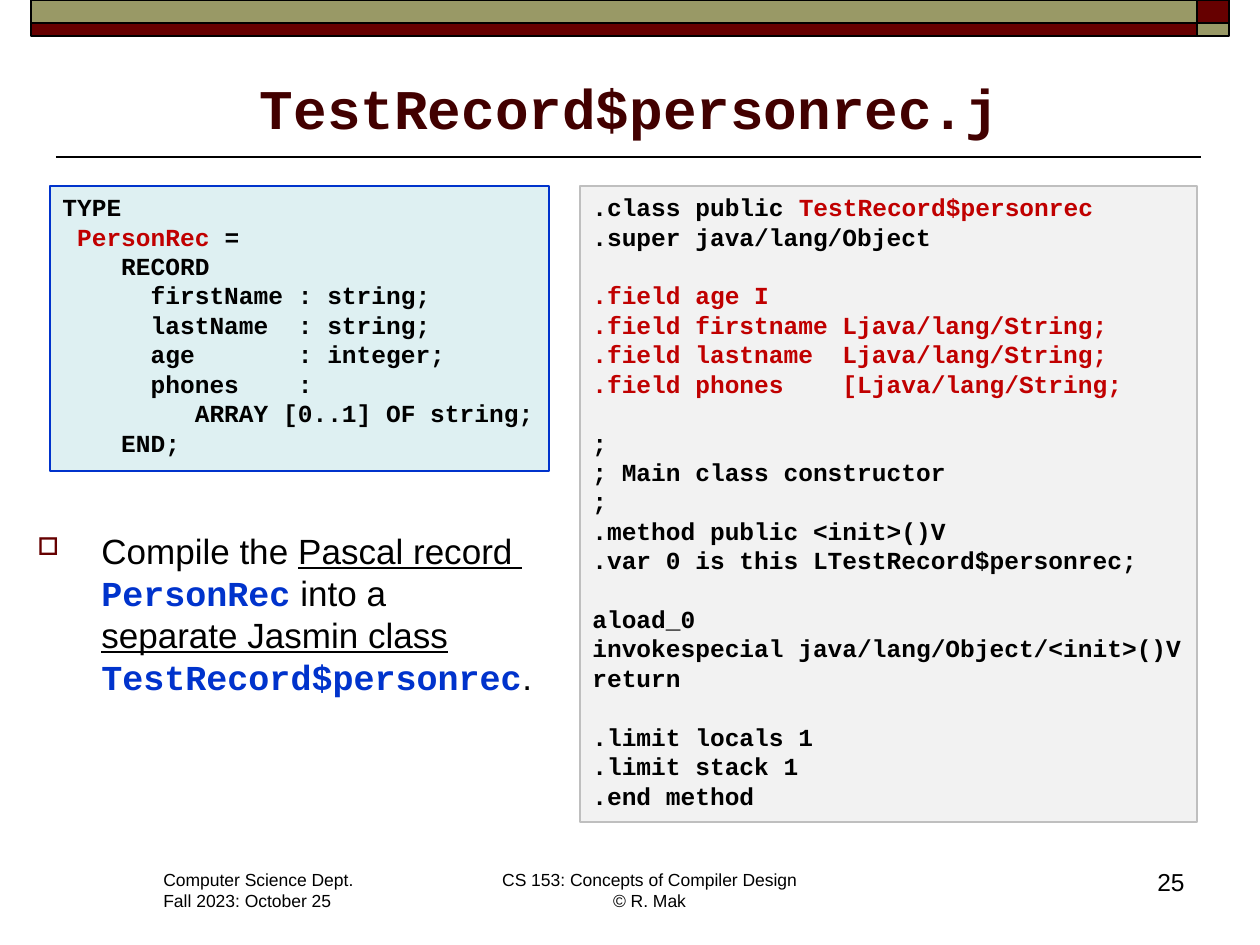
from lxml.etree import SubElement
from pptx import Presentation
from pptx.dml.color import RGBColor
from pptx.enum.shapes import MSO_CONNECTOR, MSO_SHAPE
from pptx.enum.text import MSO_ANCHOR, PP_ALIGN
from pptx.oxml.ns import qn
from pptx.util import Pt

SCALE = 914400 / 126
COLORS = {"black": "000000", "maroon": "660000", "olive": "999966", "title": "420000",
          "red": "C00000", "blue": "0033CC", "gray": "F2F2F2", "border": "BFBFBF",
          "cyan": "DEF0F2"}

TYPE_CODE = [
    [("TYPE", "black")],
    [(" ", "black"), ("PersonRec", "red"), (" =", "black")],
    [("    RECORD", "black")],
    [("      firstName : string;", "black")],
    [("      lastName  : string;", "black")],
    [("      age       : integer;", "black")],
    [("      phones    :", "black")],
    [("         ARRAY [0..1] OF string;", "black")],
    [("    END;", "black")],
]
JASMIN_GROUPS = [
    [[(".class public ", "black"), ("TestRecord$personrec", "red")],
     [(".super java/lang/Object", "black")]],
    [[(".field age I", "red")],
     [(".field firstname Ljava/lang/String;", "red")],
     [(".field lastname  Ljava/lang/String;", "red")],
     [(".field phones    [Ljava/lang/String;", "red")]],
    [[(";", "black")],
     [("; Main class constructor", "black")],
     [(";", "black")],
     [(".method public <init>()V", "black")],
     [(".var 0 is this LTestRecord$personrec;", "black")]],
    [[("aload_0", "black")],
     [("invokespecial java/lang/Object/<init>()V", "black")],
     [("return", "black")]],
    [[(".limit locals 1", "black")],
     [(".limit stack 1", "black")],
     [(".end method", "black")]],
]


def px(length):
    """Turn px into EMU."""
    return round(length * SCALE)


def rgb(name):
    """Look up a colour by name."""
    return RGBColor.from_string(COLORS[name])


def style(font, size, color="black", face="Arial", bold=False, underline=False):
    """Format a font."""
    font.size, font.name, font.bold = Pt(size), face, bold
    font.underline = underline or None
    font.color.rgb = rgb(color)


def panel(slide, box, fill, line, weight):
    """Add a filled, outlined rectangle."""
    rect = slide.shapes.add_shape(MSO_SHAPE.RECTANGLE, *map(px, box))
    rect.shadow.inherit = False
    rect.fill.solid()
    rect.fill.fore_color.rgb = rgb(fill)
    rect.line.color.rgb = rgb(line)
    rect.line.width = Pt(weight)
    return rect


def label(slide, box, text, size, align, anchor=MSO_ANCHOR.TOP, **font):
    """Add a text box in one style."""
    frame = slide.shapes.add_textbox(*map(px, box)).text_frame
    frame.word_wrap = True
    frame.vertical_anchor = anchor
    frame.text = text
    for paragraph in frame.paragraphs:
        paragraph.alignment = align
        for run in paragraph.runs:
            style(run.font, size, **font)


def header(slide, box):
    """Draw the two-tone band with its swapped corner."""
    left, top, width, height = box
    corner, upper = 32, 23
    main = width - corner
    for row_top, row_height, tones in ((top, upper, ("olive", "maroon")),
                                       (top + upper, height - upper, ("maroon", "olive"))):
        panel(slide, (left, row_top, main, row_height), tones[0], "black", 1)
        panel(slide, (left + main, row_top, corner, row_height), tones[1], "black", 1)


def heading(slide, box):
    """Place the title over its rule."""
    left, top, width, height = box
    label(slide, box, "TestRecord$personrec.j", 32, PP_ALIGN.CENTER, MSO_ANCHOR.BOTTOM,
          color="title", face="Courier New", bold=True)
    rule_y = px(top + height + 10)
    rule = slide.shapes.add_connector(MSO_CONNECTOR.STRAIGHT, px(left - 7), rule_y,
                                      px(left + width + 4), rule_y)
    rule.line.color.rgb = rgb("black")
    rule.line.width = Pt(1)
    SubElement(rule._element.spPr, qn("a:effectLst"))


def code_panel(slide, box, fill, line, groups):
    """Place groups of code lines, one line's gap apart."""
    frame = panel(slide, box, fill, line, 0.75).text_frame
    frame.word_wrap = True
    frame.vertical_anchor = MSO_ANCHOR.TOP
    paragraph = None
    for group in groups:
        for index, code_line in enumerate(group):
            first = paragraph is None
            paragraph = frame.paragraphs[0] if first else frame.add_paragraph()
            paragraph.alignment = PP_ALIGN.LEFT
            if index == 0 and not first:
                paragraph.space_before = Pt(16.8)
            for text, color in code_line:
                run = paragraph.add_run()
                run.text = text
                style(run.font, 14, color, "Courier New", True)


def explanation(slide, box):
    """Place the bulleted sentence."""
    frame = slide.shapes.add_textbox(*map(px, box)).text_frame
    frame.word_wrap = True
    sentence = frame.paragraphs[0]
    properties = sentence._p.get_or_add_pPr()
    properties.set("marL", str(px(64)))
    properties.set("indent", str(px(-64)))
    bullet_color = SubElement(properties, qn("a:buClr"))
    SubElement(bullet_color, qn("a:srgbClr"), val=COLORS["maroon"])
    SubElement(properties, qn("a:buSzPct"), val="70000")
    SubElement(properties, qn("a:buChar"), char="□")
    name = {"color": "blue", "face": "Courier New", "bold": True}
    phrases = [("Compile the ", {}, False), ("Pascal record ", {"underline": True}, True),
               ("PersonRec", name, False), (" into a", {}, True),
               ("separate Jasmin class ", {"underline": True}, False),
               ("TestRecord$personrec", name, False), (".", {}, False)]
    for text, font, breaks in phrases:
        run = sentence.add_run()
        run.text = text
        style(run.font, 20, **font)
        if breaks:
            sentence.add_line_break()


def footer(slide, box):
    """Place the department, the course and the page number."""
    left, top, width, height = box
    label(slide, (left, top + 2, 217, 55), "Computer Science Dept.\nFall 2023: October 25",
          10, PP_ALIGN.LEFT)
    label(slide, (left + 337, top + 2, 323, 55),
          "CS 153: Concepts of Compiler Design\v© R. Mak", 10, PP_ALIGN.CENTER)
    label(slide, (left + width - 88, top, 88, height), "25", 14, PP_ALIGN.RIGHT)


def main():
    """Build and save the slide."""
    deck = Presentation()
    deck.slide_width, deck.slide_height = px(1260), px(945)
    slide = deck.slides.add_slide(deck.slide_layouts[6])
    header(slide, (31, 0, 1198, 36))
    heading(slide, (63, 57, 1134, 90))
    code_panel(slide, (580, 186, 617, 636), "gray", "border", JASMIN_GROUPS)
    code_panel(slide, (50, 186, 499, 285), "cyan", "blue", [TYPE_CODE])
    explanation(slide, (25, 523, 529, 189))
    footer(slide, (151, 861, 1046, 63))
    deck.save("out.pptx")


if __name__ == "__main__":
    main()
